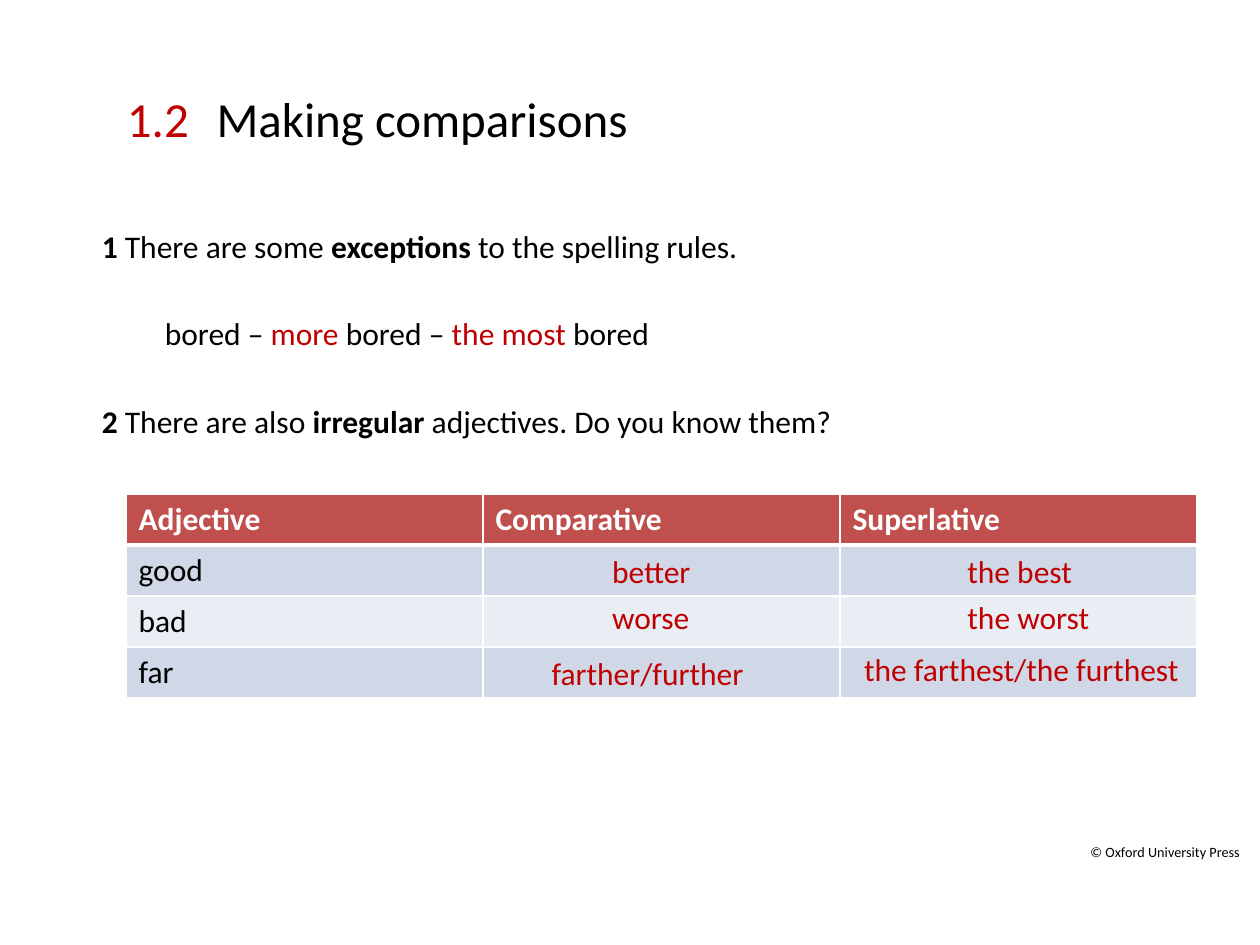
"""Build the slide on making comparisons with its table of irregular adjectives."""
from lxml.etree import SubElement
from pptx import Presentation
from pptx.dml.color import RGBColor
from pptx.enum.text import MSO_ANCHOR, PP_ALIGN
from pptx.oxml.ns import qn
from pptx.util import Inches, Pt

BLACK, RED, WHITE = "000000", "C00000", "FFFFFF"
HEAD, BANDS = "C0504D", ("D0D8E8", "E9EDF4")
BODY = {"name": "Calibri", "size": Pt(18), "bold": False}
BOLD = {**BODY, "bold": True}
LARGE = {**BODY, "size": Pt(28)}
SMALL = {**BODY, "size": Pt(14)}

NOTES = [
    (0, [("1", BLACK, BOLD), (" There are some ", BLACK, BODY),
         ("exceptions", BLACK, BOLD), (" to the spelling rules.", BLACK, BODY)]),
    (0.5, [("bored – ", BLACK, BODY), ("more", RED, BODY), (" bored – ", BLACK, BODY),
           ("the most ", RED, BODY), ("bored", BLACK, BODY)]),
    (0, [("2 ", BLACK, BOLD), ("There are also ", BLACK, BODY),
         ("irregular", BLACK, BOLD), (" adjectives. Do you know them?", BLACK, BODY)]),
]
GRID = [("Adjective", "Comparative", "Superlative"),
        ("good", "", ""), ("bad", "", ""), ("far", "", "")]
LEFT, TOP, WIDTH, ROW = 1, 3.92, 8.5, 0.405
ANSWERS = [
    ("better", 4.76, 4.33, 0.83), ("the best", 7.58, 4.33, 1.04),
    ("worse", 4.76, 4.7, 0.83), ("the worst", 7.58, 4.7, 1.19),
    ("farther/further", 4.28, 5.14, 1.74),
    ("the farthest/the furthest", 6.76, 5.11, 2.74),
]


def color(code):
    """Turn a hex string into a colour."""
    return RGBColor.from_string(code)


def style(item, values):
    """Set each named value on an item."""
    for name, value in values.items():
        setattr(item, name, value)


def write(para, text, code, font):
    """Add a formatted run to a paragraph."""
    run = para.add_run()
    run.text = text
    style(run.font, font)
    run.font.color.rgb = color(code)
    return run


def box(slide, area, **values):
    """Add a text box and return its frame."""
    frame = slide.shapes.add_textbox(*map(Inches, area)).text_frame
    style(frame, {"word_wrap": True, **values})
    return frame


def label(slide, area, text, code, font, **values):
    """Add a text box with a single run."""
    para = box(slide, area, **values).paragraphs[0]
    return para, write(para, text, code, font)


def border(cell, widths):
    """Draw white lines on the sides of a cell."""
    props = cell._tc.get_or_add_tcPr()
    for side, width in widths.items():
        line = SubElement(props, qn(f"a:ln{side}"), w=str(Pt(width)))
        fill = SubElement(line, qn("a:solidFill"))
        SubElement(fill, qn("a:srgbClr"), val=WHITE)


def add_grid(slide):
    """Add the table of adjectives."""
    size = len(GRID), len(GRID[0])
    area = map(Inches, (LEFT, TOP, WIDTH, ROW * len(GRID)))
    table = slide.shapes.add_table(*size, *area).table
    for r, row in enumerate(GRID):
        for c, text in enumerate(row):
            cell = table.cell(r, c)
            border(cell, {"L": 1, "R": 1, "T": 3 if r == 1 else 1, "B": 1 if r else 3})
            cell.fill.solid()
            cell.fill.fore_color.rgb = color(BANDS[(r - 1) % 2] if r else HEAD)
            para = cell.text_frame.paragraphs[0]
            style(para.font, BODY)
            if text:
                write(para, text, BLACK if r else WHITE, BODY if r else BOLD)


def add_notes(slide):
    """Add the numbered notes and the example."""
    frame = box(slide, (0.71, 1.75, 8.79, 2.1))
    for i, (indent, runs) in enumerate(NOTES):
        para = frame.add_paragraph() if i else frame.paragraphs[0]
        para._p.get_or_add_pPr().set("marL", str(Inches(indent)))
        if i:
            para.space_before = Pt(28.4)
        for run in runs:
            write(para, *run)


def main():
    """Put the slide together and save it."""
    deck = Presentation()
    style(deck, {"slide_width": Inches(10), "slide_height": Inches(7.5)})
    slide = deck.slides.add_slide(deck.slide_layouts[6])
    para, run = label(slide, (8.36, 6.62, 1.58, 0.26), "© Oxford University Press",
                      BLACK, SMALL, word_wrap=False)
    para.alignment = PP_ALIGN.RIGHT
    run.font._element.set("baseline", "30000")
    label(slide, (1.62, 0.31, 7.88, 1.25), "Making comparisons", BLACK, LARGE,
          vertical_anchor=MSO_ANCHOR.MIDDLE)
    add_notes(slide)
    label(slide, (0.91, 0.65, 0.7, 0.57), "1.2", RED, LARGE, word_wrap=False)
    add_grid(slide)
    for text, left, top, width in ANSWERS:
        label(slide, (left, top, width, 0.4), text, RED, BODY, word_wrap=False)
    deck.save("out.pptx")


if __name__ == "__main__":
    main()
